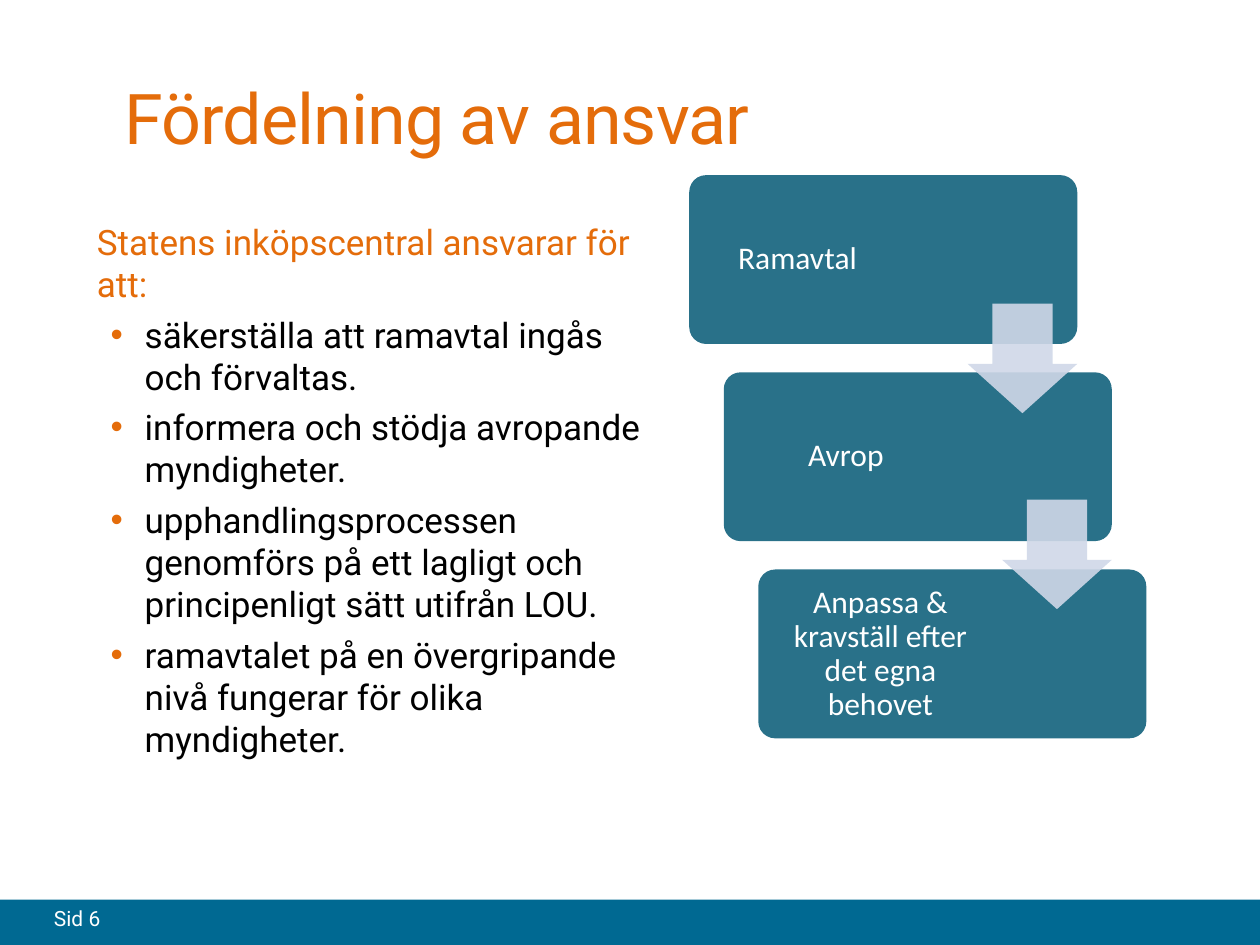
"""Build the slide on how responsibility is divided, with a three-step flow."""
import dataclasses

import pptx
import pptx.dml.color
import pptx.enum.shapes
import pptx.enum.text
import pptx.oxml
import pptx.oxml.ns
import pptx.util


@dataclasses.dataclass(frozen=True)
class Theme:
    accent: str = "E46C0A"
    body: str = "000000"
    light: str = "FFFFFF"
    footer: str = "006992"
    step: str = "297189"
    arrow: str = "D0D8E8"
    main_font: str = "Roboto"
    step_font: str = "Calibri"
    title_size: int = 40
    body_size: int = 20
    step_size: int = 18
    footer_size: int = 12


theme = Theme()
presentation = pptx.Presentation()
presentation.slide_width = pptx.util.Inches(10)
presentation.slide_height = pptx.util.Inches(7.5)
slide = presentation.slides.add_slide(presentation.slide_layouts[6])
column = presentation.slide_width / 100
row = presentation.slide_height / 75
SHAPES = pptx.enum.shapes.MSO_SHAPE
MIDDLE = pptx.enum.text.MSO_ANCHOR.MIDDLE


def add_block(kind, left, top, width, height, color, adjustments=()):
    shape = slide.shapes.add_shape(
        kind, round(left * column), round(top * row), round(width * column), round(height * row)
    )
    shape.shadow.inherit = False
    shape.fill.solid()
    shape.fill.fore_color.rgb = pptx.dml.color.RGBColor.from_string(color)
    shape.line.fill.background()
    for index, value in enumerate(adjustments):
        shape.adjustments[index] = value
    return shape


def add_text(left, top, width, height, lines, font, size):
    shape = slide.shapes.add_textbox(
        round(left * column), round(top * row), round(width * column), round(height * row)
    )
    frame = shape.text_frame
    frame.word_wrap = True
    for index, (text, color) in enumerate(lines):
        paragraph = frame.add_paragraph() if index else frame.paragraphs[0]
        run = paragraph.add_run()
        run.text = text
        run.font.name = font
        run.font.size = pptx.util.Pt(size)
        run.font.color.rgb = pptx.dml.color.RGBColor.from_string(color)
    return frame


add_block(SHAPES.RECTANGLE, 0, 71.4, 100, 3.6, theme.footer)
add_text(3.3, 71.4, 24.6, 4, [("Sid 6", theme.light)], theme.main_font, theme.footer_size)

title = add_text(
    8.9, 3, 87.4, 12.5, [("Fördelning av ansvar", theme.accent)], theme.main_font, theme.title_size
)
title.vertical_anchor = MIDDLE
title.paragraphs[0].runs[0].font._element.set("spc", "-50")

duties = [
    "säkerställa att ramavtal ingås och förvaltas.",
    "informera och stödja avropande myndigheter.",
    "upphandlingsprocessen genomförs på ett lagligt och principenligt sätt utifrån LOU.",
    "ramavtalet på en övergripande nivå fungerar för olika myndigheter.",
]
body_lines = [("Statens inköpscentral ansvarar för att:", theme.accent)]
body_lines += [(duty, theme.body) for duty in duties]
body = add_text(6.7, 17, 47.2, 49.5, body_lines, theme.main_font, theme.body_size)
namespace = pptx.oxml.ns.nsdecls("a")
for paragraph in body.paragraphs:
    paragraph.space_after = pptx.util.Pt(5)
for paragraph in body.paragraphs[1:]:
    properties = paragraph._p.get_or_add_pPr()
    properties.set("marL", str(pptx.util.Inches(0.38)))
    properties.set("indent", str(pptx.util.Inches(-0.27)))
    for bullet in (
        f'<a:buClr {namespace}><a:srgbClr val="{theme.accent}"/></a:buClr>',
        f'<a:buFont {namespace} typeface="Arial"/>',
        f'<a:buChar {namespace} char="•"/>',
    ):
        properties.append(pptx.oxml.parse_xml(bullet))

steps = [("Ramavtal", 16.4), ("Avrop", 18.6), ("Anpassa & kravställ efter det egna behovet", 18.6)]
for index, (label, label_width) in enumerate(steps):
    left, top = 54.7 + 2.74 * index, 13.9 + 15.65 * index
    add_block(SHAPES.ROUNDED_RECTANGLE, left, top, 30.8, 13.4, theme.step, [0.1])
    frame = add_text(
        left + 0.4, top + 0.4, label_width, 12.6, [(label, theme.light)], theme.step_font, theme.step_size
    )
    frame.vertical_anchor = MIDDLE
    frame.margin_left = frame.margin_right = pptx.util.Inches(0.07)
    frame.margin_top = frame.margin_bottom = pptx.util.Inches(0.07)
    frame.paragraphs[0].alignment = pptx.enum.text.PP_ALIGN.CENTER
    frame.paragraphs[0].line_spacing = 0.9

for index in range(len(steps) - 1):
    arrow = add_block(
        SHAPES.DOWN_ARROW, 76.8 + 2.74 * index, 24.1 + 15.55 * index, 8.7, 8.7, theme.arrow, [0.55, 0.45]
    )
    fill_color = arrow._element.spPr.find(".//" + pptx.oxml.ns.qn("a:srgbClr"))
    fill_color.append(pptx.oxml.parse_xml(f'<a:alpha {namespace} val="90000"/>'))

presentation.save("out.pptx")
